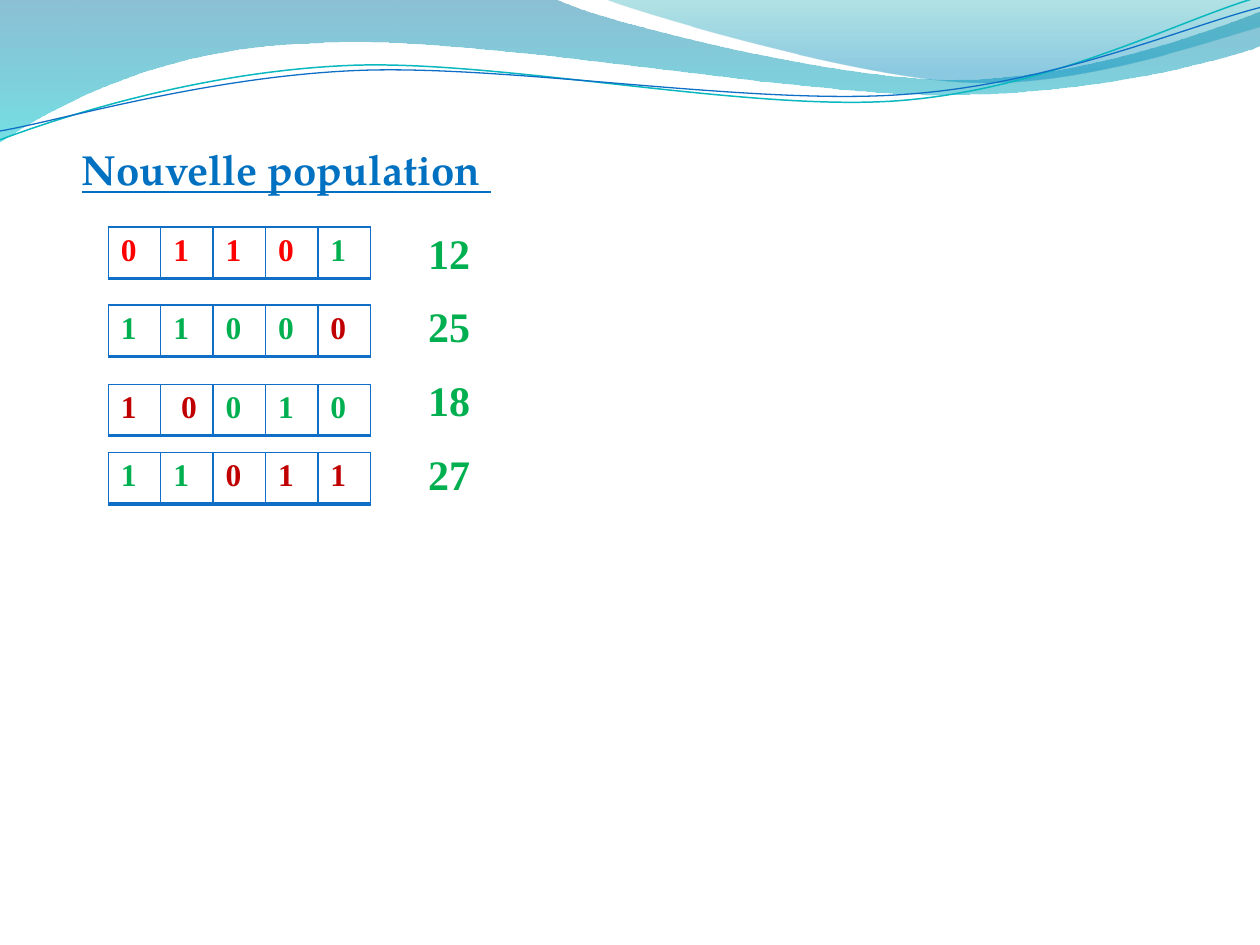
from dataclasses import dataclass

from lxml import etree
from pptx import Presentation
from pptx import util as u
from pptx.dml.color import RGBColor
from pptx.enum import text
from pptx.oxml import parse_xml
from pptx.oxml.ns import nsdecls, qn
from pptx.util import Inches


@dataclass(frozen=True)
class Theme:
    title_font: str = "TeX Gyre Pagella"
    body_font: str = "Times New Roman"
    title_color: str = "0070C0"
    border: str = "0F6FC6"
    teal_line: str = "0AB8BF"
    red: str = "FF0000"
    dark_red: str = "C00000"
    green: str = "00B050"
    large: int = 24
    small: int = 18


theme = Theme()
presentation = Presentation()
presentation.slide_width, presentation.slide_height = Inches(10), Inches(7.5)
slide = presentation.slides.add_slide(presentation.slide_layouts[5])


def add_curve(segments, closed):
    """Draw a path of segments; six numbers make a cubic curve, two a line."""
    points = [(Inches(x), Inches(y)) for segment in segments
              for x, y in zip(segment[::2], segment[1::2])]
    builder = slide.shapes.build_freeform(*points[0])
    builder.add_line_segments(points[1:], close=closed)
    shape = builder.convert_to_shape()
    # Merge each three line points of a curve into one cubic segment
    lines = iter(list(shape._element.iter(qn("a:lnTo"))))
    for segment in segments[1:]:
        steps = [next(lines) for _ in segment[::2]]
        if len(steps) == 3:
            curve = etree.Element(qn("a:cubicBezTo"))
            steps[0].addprevious(curve)
            for step in steps:
                curve.append(step[0])
                step.getparent().remove(step)
    shape.shadow.inherit = False
    shape.fill.background()
    return shape


def add_grid(rows, left, top, width, height, size, border=None):
    """Add a plain table; each cell is a (text, colour) pair."""
    table = slide.shapes.add_table(len(rows), len(rows[0]), Inches(left), Inches(top),
                                   Inches(width), Inches(height)).table
    table.first_row = table.horz_banding = False
    for row_index, row in enumerate(rows):
        for column_index, (value, color) in enumerate(row):
            cell = table.cell(row_index, column_index)
            cell.text = value
            font = cell.text_frame.paragraphs[0].font
            font.name, font.size, font.bold = theme.body_font, u.Pt(size), True
            font.color.rgb = RGBColor.from_string(color)
            properties = cell._tc.get_or_add_tcPr()
            for side, points in (("L", 1), ("R", 1), ("T", 1), ("B", 2)):
                line = etree.SubElement(properties, qn(f"a:ln{side}"))
                if border:
                    line.set("w", str(u.Pt(points)))
                    fill = etree.SubElement(line, qn("a:solidFill"))
                    etree.SubElement(fill, qn("a:srgbClr"), val=border)
                else:
                    etree.SubElement(line, qn("a:noFill"))
            cell.fill.background()
    return table


# Wave bands: path, then gradient stops as (position, colour, opacity)
bands = [
    ([(0, 0), (4.4, -0.01), (4.76, 0.17, 6.64, 0.63, 7.58, 0.63),
      (8.53, 0.63, 9.58, 0.26, 10, 0.09), (10.01, 0.36),
      (9.83, 0.44, 8.7, 0.76, 7.46, 0.75), (6.22, 0.75, 3.82, 0.28, 2.57, 0.34),
      (1.29, 0.36, 0.46, 0.83, -0.01, 1.13)],
     [(0, "0074A1", 45), (100, "00C6CF", 55)]),
    ([(4.79, -0.01), (5.09, 0.11, 6.82, 0.62, 7.69, 0.65),
      (8.56, 0.69, 9.61, 0.32, 10, 0.21), (10, 0)],
     [(0, "00A1A9", 30), (80, "008BBF", 45)]),
]
for band, stops in bands:
    shape = add_curve(band, closed=True)
    shape.line.fill.background()
    stop_xml = "".join(
        f'<a:gs pos="{position * 1000}"><a:srgbClr val="{color}">'
        f'<a:alpha val="{opacity * 1000}"/></a:srgbClr></a:gs>'
        for position, color, opacity in stops)
    gradient = parse_xml(f'<a:gradFill {nsdecls("a")}><a:gsLst>{stop_xml}</a:gsLst>'
                         '<a:lin ang="5400000" scaled="0"/></a:gradFill>')
    properties = shape._element.spPr
    properties.replace(properties.find(qn("a:noFill")), gradient)

# Wave lines
waves = [
    ([(0, 1.11), (0.48, 0.93, 1.58, 0.57, 2.77, 0.52), (3.95, 0.47, 5.93, 0.89, 7.13, 0.8),
      (8.33, 0.71, 9.38, 0.15, 9.98, -0.02)], theme.teal_line, 0.85),
    ([(0, 1.04), (0.47, 0.96, 1.64, 0.61, 2.83, 0.56), (4.03, 0.51, 5.97, 0.84, 7.17, 0.75),
      (8.36, 0.67, 9.41, 0.21, 10, 0.06)], theme.border, 0.75),
]
for wave, color, width in waves:
    shape = add_curve(wave, closed=False)
    shape.line.color.rgb = RGBColor.from_string(color)
    shape.line.width = u.Pt(width)

# Title
title = slide.shapes.title
title.left, title.top, title.width, title.height = map(Inches, (0.55, 1.09, 9, 6.09))
title.text_frame.text = "Nouvelle population "
title.text_frame.auto_size = text.MSO_AUTO_SIZE.NONE
title.text_frame.vertical_anchor = text.MSO_ANCHOR.TOP
paragraph = title.text_frame.paragraphs[0]
paragraph.alignment = text.PP_ALIGN.JUSTIFY
paragraph.space_after = u.Pt(12)
paragraph.font.name, paragraph.font.size = theme.title_font, u.Pt(theme.large)
paragraph.font.bold = paragraph.font.underline = True
paragraph.font.color.rgb = RGBColor.from_string(theme.title_color)

# Chromosomes: top edge, then runs of genes by colour
chromosomes = [
    (1.8, [(["0", "1", "1", "0"], theme.red), (["1"], theme.green)]),
    (2.42, [(["1", "1", "0", "0"], theme.green), (["0"], theme.dark_red)]),
    (3.05, [(["1", " 0"], theme.dark_red), (["0", "1", "0"], theme.green)]),
    (3.59, [(["1", "1"], theme.green), (["0", "1", "1"], theme.dark_red)]),
]
for top, parts in chromosomes:
    genes = [(gene, color) for part, color in parts for gene in part]
    add_grid([genes], 0.86, top, 2.08, 0.41, theme.small, theme.border)

# Decoded values
values = [[(value, theme.green)] for value in ("12", "25", "18", "27")]
table = add_grid(values, 2.44, 1.72, 2.25, 2.34, theme.large)
for cell in table.iter_cells():
    cell.margin_left = cell.margin_right = cell.margin_bottom = 0
    cell.margin_top = Inches(0.12)
    cell.text_frame.paragraphs[0].alignment = text.PP_ALIGN.CENTER

presentation.save("out.pptx")
